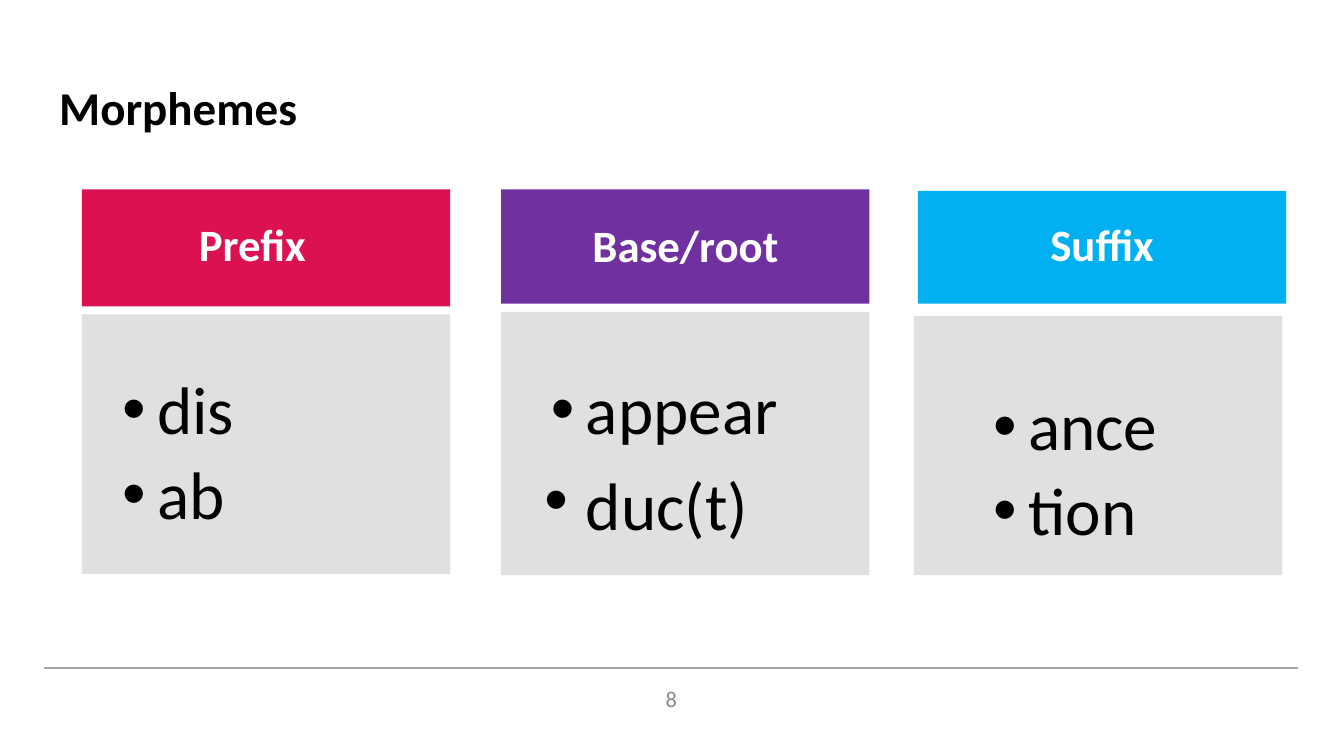
from dataclasses import dataclass

from lxml import etree
from pptx import Presentation
from pptx.dml.color import RGBColor
from pptx.enum.shapes import MSO_CONNECTOR, MSO_SHAPE
from pptx.enum.text import MSO_ANCHOR, MSO_AUTO_SIZE, PP_ALIGN
from pptx.oxml.ns import qn
from pptx.util import Inches, Pt

RECTANGLE, STRAIGHT = MSO_SHAPE.RECTANGLE, MSO_CONNECTOR.STRAIGHT
TOP, MIDDLE = MSO_ANCHOR.TOP, MSO_ANCHOR.MIDDLE
LEFT, CENTER = PP_ALIGN.LEFT, PP_ALIGN.CENTER
NO_AUTOFIT = MSO_AUTO_SIZE.NONE

BLACK = RGBColor(0x00, 0x00, 0x00)
WHITE = RGBColor(0xFF, 0xFF, 0xFF)
CRIMSON = RGBColor(0xDB, 0x11, 0x51)
PURPLE = RGBColor(0x70, 0x30, 0xA0)
SKY = RGBColor(0x00, 0xB0, 0xF0)
PANEL_GREY = RGBColor(0xDD, 0xDD, 0xDD)
RULE_GREY = RGBColor(0xA5, 0xA5, 0xA5)
NUMBER_GREY = RGBColor(0x89, 0x89, 0x89)

FONT = "Calibri"
COLUMNS, ROWS = 100, 56.25  # square grid cells, a tenth of an inch each
CARD_WIDTH = 27.4
HEADING_INSETS = (0.33, 0.19, 0.33, 0.19)
LIST_INSETS = (0.25, 0.25, 0.33, 0.38)


@dataclass(frozen=True)
class Area:
    """A rectangle in grid columns and rows."""
    column: float
    row: float
    columns: float
    rows: float

    def lengths(self) -> list:
        return [grid(n) for n in (self.column, self.row, self.columns, self.rows)]


@dataclass(frozen=True)
class Item:
    text: str
    hanging: float = 0.26
    tab_size: float = 0  # a larger trailing tab makes the line taller


@dataclass(frozen=True)
class Card:
    heading: str
    color: RGBColor
    banner: Area
    heading_area: Area
    panel: Area
    list_area: Area
    items: tuple


CARDS = (
    Card("Prefix\t", CRIMSON,
         Area(6.1, 14.1, CARD_WIDTH, 8.7), Area(6.1, 15.2, CARD_WIDTH, 6.4),
         Area(6.1, 23.4, CARD_WIDTH, 19.3), Area(6.1, 25.5, CARD_WIDTH, 14.3),
         (Item("dis\t"), Item("ab"))),
    Card("Base/root", PURPLE,
         Area(37.3, 14.1, CARD_WIDTH, 8.5), Area(37.3, 15.3, CARD_WIDTH, 6.3),
         Area(37.3, 23.2, CARD_WIDTH, 19.6), Area(38, 25.5, 26.6, 15.9),
         (Item("appear"), Item("duc(t)", hanging=0.31, tab_size=43))),
    Card("Suffix", SKY,
         Area(68.3, 14.2, CARD_WIDTH, 8.4), Area(68.3, 15.3, CARD_WIDTH, 6.2),
         Area(68, 23.5, CARD_WIDTH, 19.3), Area(70.9, 26.7, 24.5, 13.7),
         (Item("ance"), Item("tion"))),
)


def grid(cells: float) -> int:
    return Inches(cells / 10)


def add_run(para, text: str, size: float, color: RGBColor, bold: bool = False) -> None:
    span = para.add_run()
    span.text = text
    span.font.name = FONT
    span.font.size = Pt(size)
    span.font.bold = bold
    span.font.color.rgb = color


def format_frame(frame, anchor, insets: tuple) -> None:
    frame.word_wrap = True
    frame.auto_size = NO_AUTOFIT
    frame.vertical_anchor = anchor
    (frame.margin_left, frame.margin_top,
     frame.margin_right, frame.margin_bottom) = map(Inches, insets)


def add_text_frame(page, area: Area, anchor, insets: tuple):
    frame = page.shapes.add_textbox(*area.lengths()).text_frame
    format_frame(frame, anchor, insets)
    return frame


def add_block(page, area: Area, color: RGBColor, opacity: int = 100) -> None:
    box = page.shapes.add_shape(RECTANGLE, *area.lengths())
    box.shadow.inherit = False
    box.fill.solid()
    box.fill.fore_color.rgb = color
    box.line.fill.background()
    if opacity < 100:
        solid_color = box.fill._xPr.find(".//" + qn("a:srgbClr"))
        etree.SubElement(solid_color, qn("a:alpha"), val=str(opacity * 1000))


def add_bullet(para, hanging: float) -> None:
    properties = para._p.get_or_add_pPr()
    properties.set("marL", str(Inches(0.31)))
    properties.set("indent", str(-Inches(hanging)))
    bullet_color = etree.SubElement(properties, qn("a:buClr"))
    etree.SubElement(bullet_color, qn("a:srgbClr"), val=str(BLACK))
    etree.SubElement(properties, qn("a:buFont"), typeface="Arial")
    etree.SubElement(properties, qn("a:buChar"), char="•")


def add_card(page, card: Card) -> None:
    add_block(page, card.banner, card.color)
    heading = add_text_frame(page, card.heading_area, MIDDLE, HEADING_INSETS).paragraphs[0]
    heading.alignment = CENTER
    heading.line_spacing = 0.9
    add_run(heading, card.heading, 24, WHITE, bold=True)

    add_block(page, card.panel, PANEL_GREY, opacity=89)
    frame = add_text_frame(page, card.list_area, TOP, LIST_INSETS)
    for index, item in enumerate(card.items):
        para = frame.add_paragraph() if index else frame.paragraphs[0]
        add_bullet(para, item.hanging)
        para.level = 1
        para.line_spacing = 0.9
        if index:
            para.space_before = Pt(6.5)
        add_run(para, item.text, 36, BLACK)
        if item.tab_size:
            add_run(para, "\t", item.tab_size, BLACK)


def add_title(page, text: str) -> None:
    title = page.shapes.title
    title.left, title.top, title.width, title.height = Area(3.4, 4.87, 93.2, 6.3).lengths()
    format_frame(title.text_frame, TOP, (0.1, 0.1, 0.1, 0.1))
    para = title.text_frame.paragraphs[0]
    para.alignment = LEFT
    add_run(para, text, 25.2, BLACK, bold=True)


def add_footer(page, number: str) -> None:
    para = add_text_frame(page, Area(38.3, 50, 23.3, 4), MIDDLE,
                          (0.1, 0.05, 0.1, 0.05)).paragraphs[0]
    para.alignment = CENTER
    add_run(para, number, 12, NUMBER_GREY)
    rule = page.shapes.add_connector(STRAIGHT, grid(3.3), grid(49.7), grid(96.6), grid(49.7))
    rule.line.color.rgb = RULE_GREY
    rule.line.width = Pt(0.75)
    etree.SubElement(rule._element.spPr, qn("a:effectLst"))


def main() -> None:
    deck = Presentation()
    deck.slide_width, deck.slide_height = grid(COLUMNS), grid(ROWS)
    page = deck.slides.add_slide(deck.slide_layouts.get_by_name("Title Only"))
    add_footer(page, "8")
    add_title(page, "Morphemes")
    for card in CARDS:
        add_card(page, card)
    deck.save("out.pptx")


if __name__ == "__main__":
    main()
